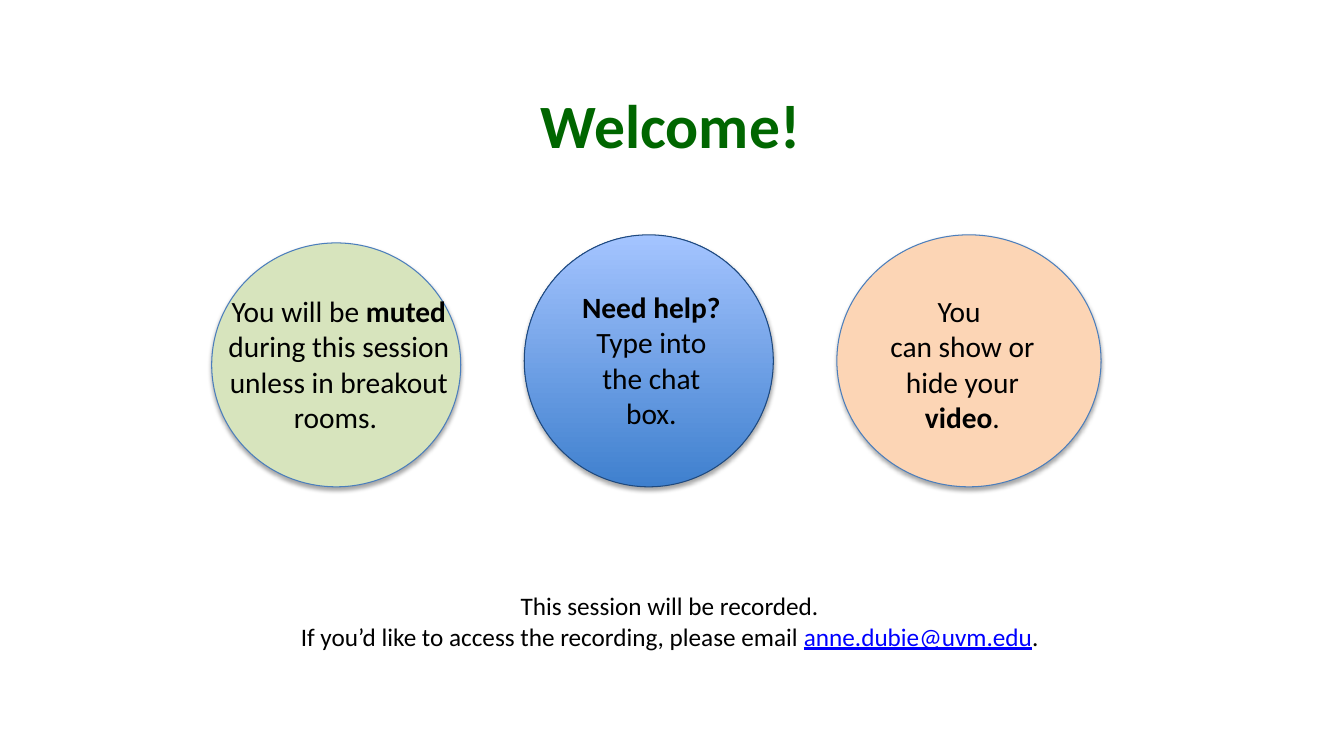
from dataclasses import dataclass

from lxml import etree
from pptx import Presentation
from pptx.dml.color import RGBColor
from pptx.enum.shapes import MSO_SHAPE
from pptx.enum.text import MSO_ANCHOR, MSO_AUTO_SIZE, MSO_UNDERLINE, PP_ALIGN
from pptx.oxml.ns import qn
from pptx.shapes.autoshape import Shape
from pptx.slide import Slide
from pptx.text.text import Font
from pptx.util import Inches, Pt

ELLIPSE = MSO_SHAPE.OVAL
MIDDLE = MSO_ANCHOR.MIDDLE
CENTER = PP_ALIGN.CENTER
GROW = MSO_AUTO_SIZE.SHAPE_TO_FIT_TEXT
UNDERLINE = MSO_UNDERLINE.SINGLE_LINE
TITLE_ONLY = 5
FONT_NAME = "Calibri"
BLACK, GREEN, LINK_BLUE = "000000", "006600", "0000FF"


@dataclass(frozen=True)
class Area:
    """A rectangle on the slide, in inches."""

    left: float
    top: float
    width: float
    height: float


@dataclass(frozen=True)
class Span:
    """A stretch of text with one format."""

    text: str
    bold: bool = False
    link: bool = False


@dataclass(frozen=True)
class Label:
    """A centred text box made of paragraphs of spans."""

    area: Area
    size: float
    paragraphs: list[list[Span]]


@dataclass(frozen=True)
class Bubble:
    """A circle with its label; two fills make a gradient from the bottom up."""

    area: Area
    fills: list[str]
    line: str
    label: Label


BUBBLES = [
    Bubble(Area(5.2, 2.33, 2.47, 2.5), ["3F80CE", "A4C4FF"], "1F497D",
           Label(Area(5.64, 2.82, 1.64, 1.51), 21, [
               [Span("Need help?", bold=True)],
               [Span("Type into the chat box.")]])),
    Bubble(Area(2.1, 2.41, 2.47, 2.42), ["D7E4BD"], "4B7EBC",
           Label(Area(2.15, 2.86, 2.42, 1.51), 21, [
               [Span("You will be "), Span("muted", bold=True),
                Span(" during this session unless in breakout rooms. ")]])),
    Bubble(Area(8.3, 2.33, 2.62, 2.5), ["FCD5B5"], "4B7EBC",
           Label(Area(8.55, 2.86, 1.99, 1.51), 21, [
               [Span("You ")],
               [Span("can show or hide your "), Span("video", bold=True), Span(".")]])),
]
RECORDING_NOTE = Label(Area(1.67, 5.81, 10, 0.71), 18, [
    [Span("This session will be recorded. ")],
    [Span("If you’d like to access the recording, please email "),
     Span("anne.dubie@uvm.edu", link=True), Span(". ")]])


def color(value: str) -> RGBColor:
    """Turn a hex string into a colour."""
    return RGBColor.from_string(value)


def bounds(area: Area) -> tuple[Inches, Inches, Inches, Inches]:
    """Give an area as slide lengths."""
    return Inches(area.left), Inches(area.top), Inches(area.width), Inches(area.height)


def style_font(font: Font, size: float, shade: str, bold: bool) -> None:
    """Set the face, size, colour and weight of a font."""
    font.name = FONT_NAME
    font.size = Pt(size)
    font.color.rgb = color(shade)
    font.bold = bold


def add_title(page: Slide, text: str, area: Area) -> None:
    """Place and format the title placeholder."""
    title = page.shapes.title
    title.left, title.top, title.width, title.height = bounds(area)
    frame = title.text_frame
    frame.text = text
    frame.vertical_anchor = MIDDLE
    para = frame.paragraphs[0]
    para.alignment = CENTER
    style_font(para.runs[0].font, 44, GREEN, True)


def add_label(page: Slide, label: Label) -> None:
    """Draw a text box with its formatted spans."""
    frame = page.shapes.add_textbox(*bounds(label.area)).text_frame
    frame.word_wrap = True
    frame.auto_size = GROW
    for index, spans in enumerate(label.paragraphs):
        para = frame.add_paragraph() if index else frame.paragraphs[0]
        para.alignment = CENTER
        for span in spans:
            run = para.add_run()
            run.text = span.text
            style_font(run.font, label.size, LINK_BLUE if span.link else BLACK, span.bold)
            if span.link:
                run.font.underline = UNDERLINE


def add_shadow(shape: Shape) -> None:
    """Give a shape a soft shadow straight below it."""
    shape.shadow.inherit = False
    effects = shape._element.spPr.find(qn("a:effectLst"))
    shadow = etree.SubElement(effects, qn("a:outerShdw"), blurRad=str(Pt(3.1)),
                              dist=str(Pt(1.8)), dir="5400000", rotWithShape="0")
    tint = etree.SubElement(shadow, qn("a:srgbClr"), val=BLACK)
    etree.SubElement(tint, qn("a:alpha"), val="35000")


def add_bubble(page: Slide, bubble: Bubble) -> None:
    """Draw a circle and the label over it."""
    circle = page.shapes.add_shape(ELLIPSE, *bounds(bubble.area))
    if len(bubble.fills) > 1:
        circle.fill.gradient()
        circle.fill.gradient_angle = 90
        for stop, shade in zip(circle.fill.gradient_stops, bubble.fills):
            stop.color.rgb = color(shade)
    else:
        circle.fill.solid()
        circle.fill.fore_color.rgb = color(bubble.fills[0])
    circle.line.color.rgb = color(bubble.line)
    circle.line.width = Pt(0.75)
    add_shadow(circle)
    add_label(page, bubble.label)


def main() -> None:
    """Build the welcome slide and save it."""
    deck = Presentation()
    deck.slide_width, deck.slide_height = Inches(13.33), Inches(7.5)
    page = deck.slides.add_slide(deck.slide_layouts[TITLE_ONLY])
    add_title(page, "Welcome!", Area(2.15, 0.6, 9, 1.25))
    for bubble in BUBBLES:
        add_bubble(page, bubble)
    add_label(page, RECORDING_NOTE)
    deck.save("out.pptx")


if __name__ == "__main__":
    main()
